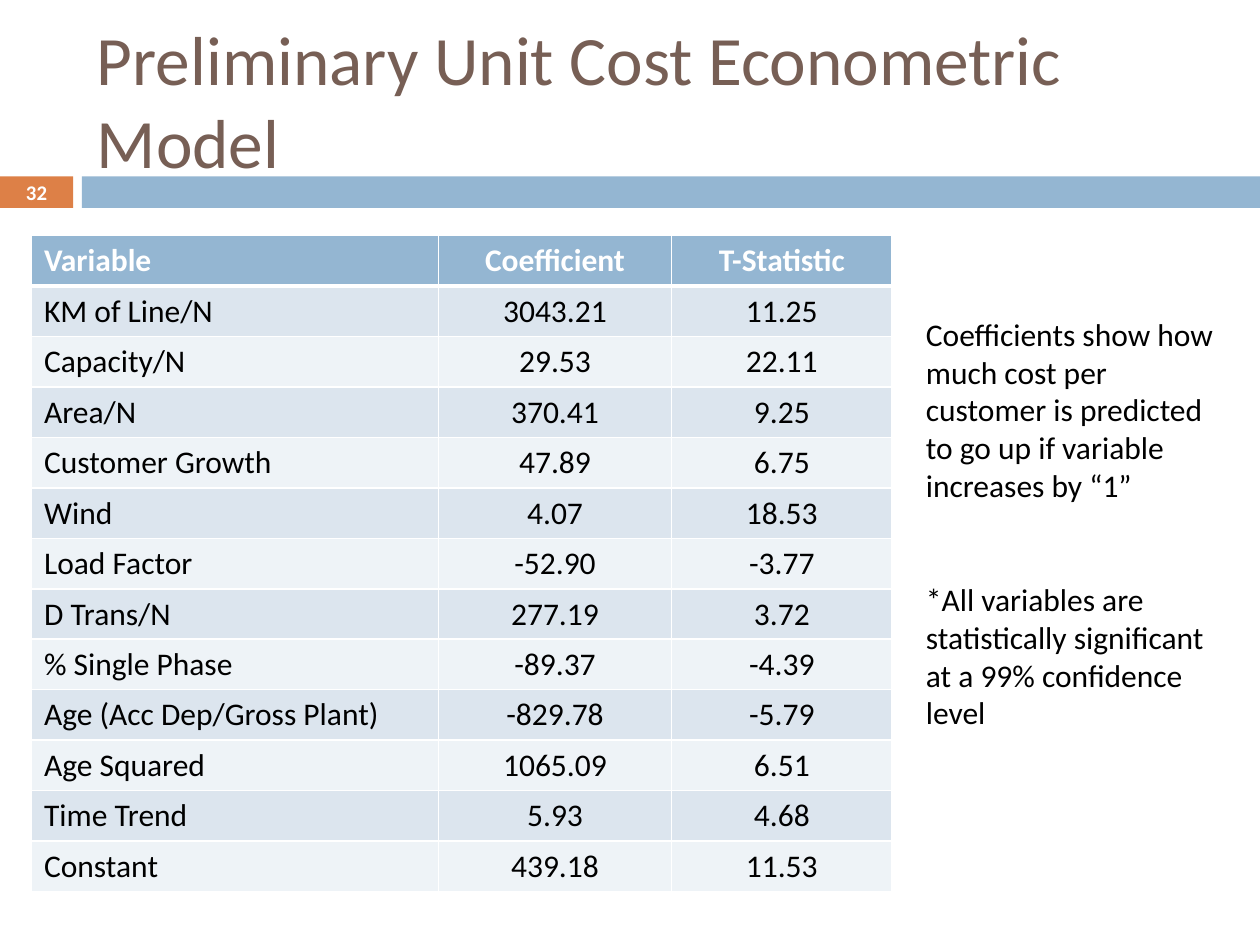
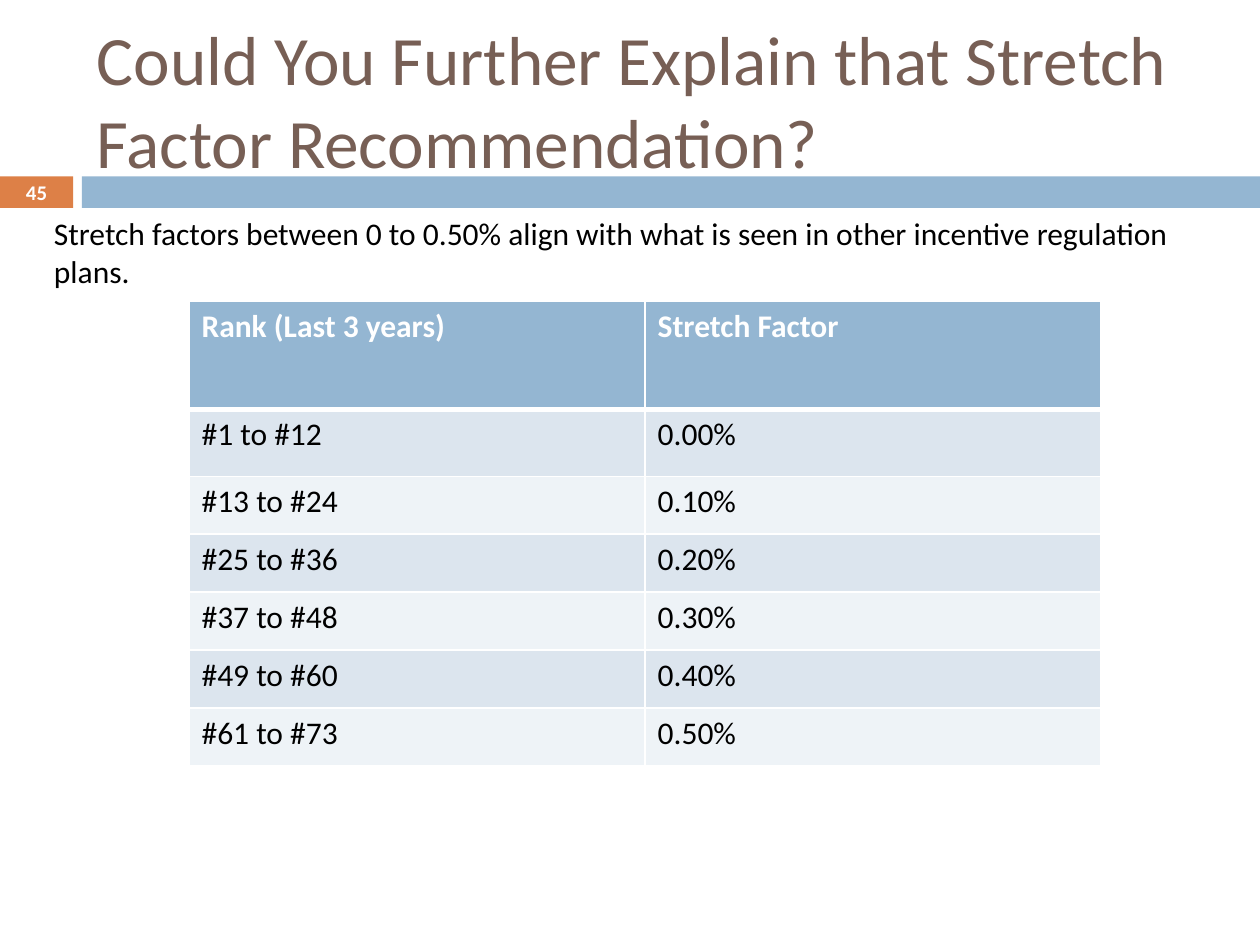
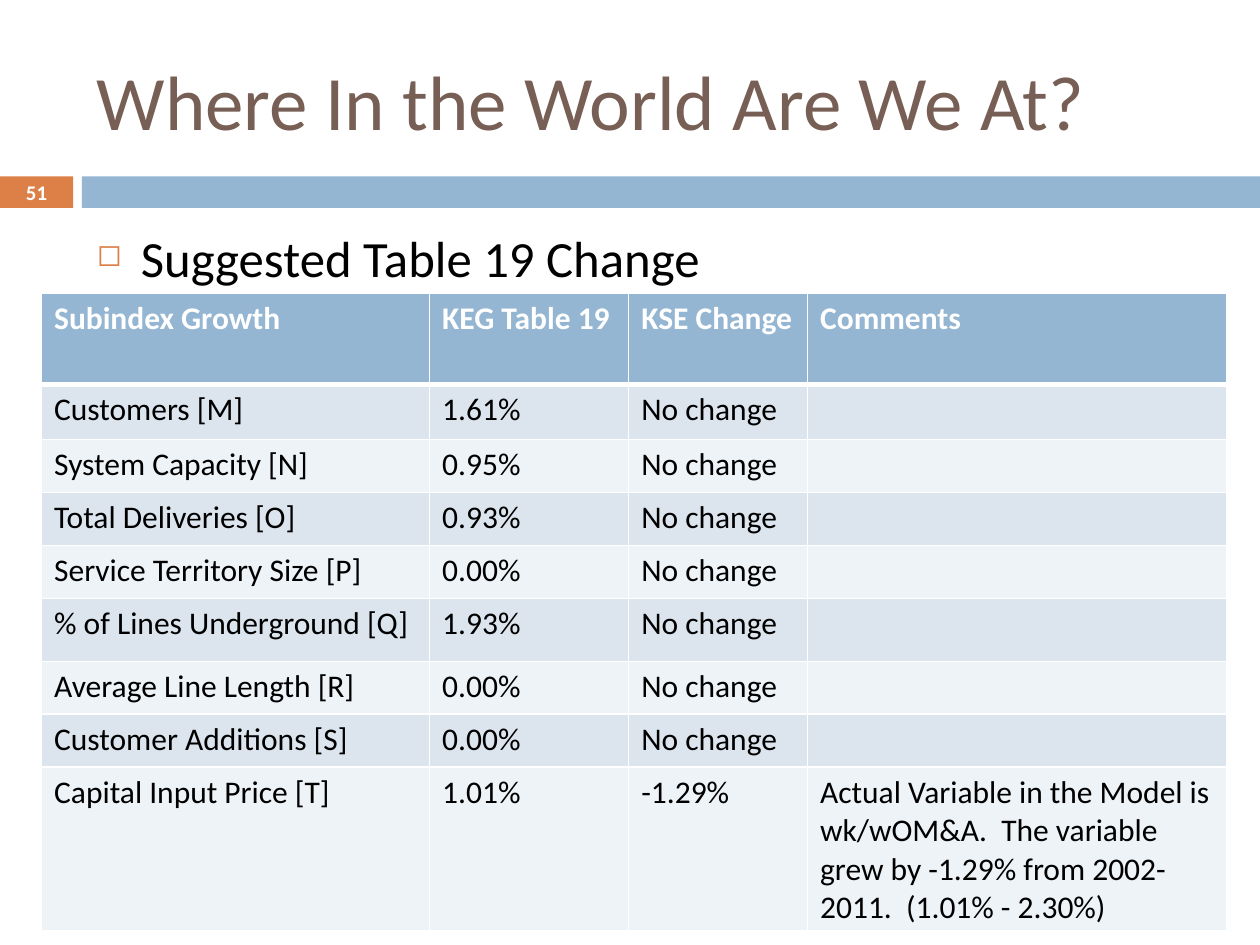
"""Build three slides of tables on a cost model and its stretch factors."""
from lxml import etree
from pptx import Presentation
from pptx.dml.color import RGBColor
from pptx.enum.shapes import MSO_SHAPE
from pptx.enum.text import MSO_ANCHOR, PP_ALIGN
from pptx.oxml.ns import qn
from pptx.util import Inches, Pt

RECT = MSO_SHAPE.RECTANGLE
TOP, MIDDLE = MSO_ANCHOR.TOP, MSO_ANCHOR.MIDDLE
LEFT, CENTER = PP_ALIGN.LEFT, PP_ALIGN.CENTER
FONT = "Calibri"
COLORS = {
    "title": "775F55", "accent": "DD8047", "band": "94B6D2",
    "odd": "DCE5EE", "even": "EEF3F7", "white": "FFFFFF", "black": "000000",
}

MODEL = [
    ("Variable", "Coefficient", "T-Statistic"),
    ("KM of Line/N", "3043.21", "11.25"),
    ("Capacity/N", "29.53", "22.11"),
    ("Area/N", "370.41", "9.25"),
    ("Customer Growth", "47.89", "6.75"),
    ("Wind", "4.07", "18.53"),
    ("Load Factor", "-52.90", "-3.77"),
    ("D Trans/N", "277.19", "3.72"),
    ("% Single Phase", "-89.37", "-4.39"),
    ("Age (Acc Dep/Gross Plant)", "-829.78", "-5.79"),
    ("Age Squared", "1065.09", "6.51"),
    ("Time Trend", "5.93", "4.68"),
    ("Constant", "439.18", "11.53"),
]
STRETCH = [
    ("Rank (Last 3 years)", "Stretch Factor"),
    ("#1 to #12", "0.00%"),
    ("#13 to #24", "0.10%"),
    ("#25 to #36", "0.20%"),
    ("#37 to #48", "0.30%"),
    ("#49 to #60", "0.40%"),
    ("#61 to #73", "0.50%"),
]
SAME = ("No change", "")
GROWTH = [
    ("Subindex Growth", "KEG Table 19", "KSE Change", "Comments"),
    ("Customers [M]", "1.61%", *SAME),
    ("System Capacity [N]", "0.95%", *SAME),
    ("Total Deliveries [O]", "0.93%", *SAME),
    ("Service Territory Size [P]", "0.00%", *SAME),
    ("% of Lines Underground [Q]", "1.93%", *SAME),
    ("Average Line Length [R]", "0.00%", *SAME),
    ("Customer Additions [S]", "0.00%", *SAME),
    ("Capital Input Price [T]", "1.01%", "-1.29%",
     "Actual Variable in the Model is wk/wOM&A.  The variable grew by "
     "-1.29% from 2002-2011.  (1.01% - 2.30%)"),
]
NOTES = [
    "Coefficients show how much cost per customer is predicted to go up "
    "if variable increases by “1”",
    "*All variables are statistically significant at a 99% confidence level",
]


def color(name):
    """Return the named colour."""
    return RGBColor.from_string(COLORS[name])


def style(para, size, tone="black", bold=False, align=LEFT):
    """Set the font and alignment of a paragraph."""
    para.alignment = align
    font = para.font
    font.name, font.size, font.bold = FONT, Pt(size), bold
    font.color.rgb = color(tone)


def write(slide, box, lines, size=18, tone="black", bold=False,
          align=LEFT, anchor=TOP, gap=0):
    """Add a text box with one paragraph per line and return its paragraphs."""
    frame = slide.shapes.add_textbox(*map(Inches, box)).text_frame
    frame.word_wrap = True
    frame.vertical_anchor = anchor
    frame.text = "\n".join(lines)
    for num, para in enumerate(frame.paragraphs):
        style(para, size, tone, bold, align)
        if num and gap:
            para.space_before = Pt(gap)
    return frame.paragraphs


def bar(slide, box, tone):
    """Add a plain filled bar."""
    shape = slide.shapes.add_shape(RECT, *map(Inches, box))
    shape.shadow.inherit = False
    shape.fill.solid()
    shape.fill.fore_color.rgb = color(tone)
    shape.line.fill.background()


def start(deck, title, number, size=39.6):
    """Add a slide with its title, bars and number."""
    slide = deck.slides.add_slide(deck.slide_layouts[6])
    bar(slide, (0, 1.4, 0.58, 0.25), "accent")
    bar(slide, (0.65, 1.4, 9.35, 0.25), "band")
    write(slide, (0.67, 0.25, 8.92, 1.08), [title], size, "title", anchor=MIDDLE)
    write(slide, (0, 1.39, 0.58, 0.27), [str(number)], 11.9, "white", True,
          CENTER, MIDDLE)
    return slide


def edge(cell, row):
    """Draw white cell borders, heavy below the header row."""
    heavy = {0: "lnB", 1: "lnT"}.get(row)
    props = cell._tc.get_or_add_tcPr()
    for side in ("lnL", "lnR", "lnT", "lnB"):
        line = etree.SubElement(props, qn("a:" + side))
        line.set("w", str(Pt(3 if side == heavy else 1)))
        fill = etree.SubElement(line, qn("a:solidFill"))
        etree.SubElement(fill, qn("a:srgbClr")).set("val", COLORS["white"])


def grid(slide, spot, data, cols, rows, align=LEFT):
    """Add a banded table, with align for all columns after the first."""
    box = (*spot, sum(cols), sum(rows))
    table = slide.shapes.add_table(len(rows), len(cols), *map(Inches, box)).table
    for col, width in zip(table.columns, cols):
        col.width = Inches(width)
    for r, (height, texts) in enumerate(zip(rows, data)):
        table.rows[r].height = Inches(height)
        head = r == 0
        tone = "band" if head else "odd" if r % 2 else "even"
        for c, text in enumerate(texts):
            cell = table.cell(r, c)
            cell.text = text
            style(cell.text_frame.paragraphs[0], 18,
                  "white" if head else "black", head, align if c else LEFT)
            edge(cell, r)
            cell.fill.solid()
            cell.fill.fore_color.rgb = color(tone)


def bullet(para):
    """Give a paragraph a hollow square bullet."""
    para.space_before = Pt(7)
    props = para._p.get_or_add_pPr()
    props.set("marL", str(Inches(0.35)))
    props.set("indent", str(-Inches(0.35)))
    tint = etree.SubElement(props, qn("a:buClr"))
    etree.SubElement(tint, qn("a:srgbClr")).set("val", COLORS["accent"])
    etree.SubElement(props, qn("a:buSzPct")).set("val", "60000")
    etree.SubElement(props, qn("a:buChar")).set("char", "◻")
    runs = props.find(qn("a:defRPr"))
    if runs is not None:
        props.append(runs)


def model(deck):
    """Add the slide with the cost model."""
    slide = start(deck, "Preliminary Unit Cost Econometric Model", 32)
    grid(slide, (0.25, 1.87), MODEL, (3.23, 1.85, 1.75), [0.4] * 13, CENTER)
    write(slide, (7.25, 2.45, 2.58, 3.43), NOTES, gap=43.5)


def stretch(deck):
    """Add the slide with the stretch factors."""
    slide = start(deck, "Could You Further Explain that Stretch Factor "
                  "Recommendation?", 45)
    grid(slide, (1.5, 2.39), STRETCH, (3.62, 3.62), [0.86, 0.53] + [0.46] * 5)
    write(slide, (0.33, 1.65, 9.42, 0.71),
          ["Stretch factors between 0 to 0.50% align with what is seen in "
           "other incentive regulation plans."])


def growth(deck):
    """Add the slide with the subindex growth."""
    slide = start(deck, "Where In the World Are We At?", 51, 44)
    bullet(write(slide, (0.67, 1.75, 8.92, 4.92),
                 ["Suggested Table 19 Change"], 29)[0])
    grid(slide, (0.33, 2.33), GROWTH, (3.08, 1.58, 1.42, 3.33),
         [0.72, 0.44] + [0.42] * 3 + [0.5, 0.42, 0.42, 1.3])


def main():
    """Build and save the deck."""
    deck = Presentation()
    deck.slide_width, deck.slide_height = Inches(10), Inches(7.5)
    for page in (model, stretch, growth):
        page(deck)
    deck.save("out.pptx")


if __name__ == "__main__":
    main()
